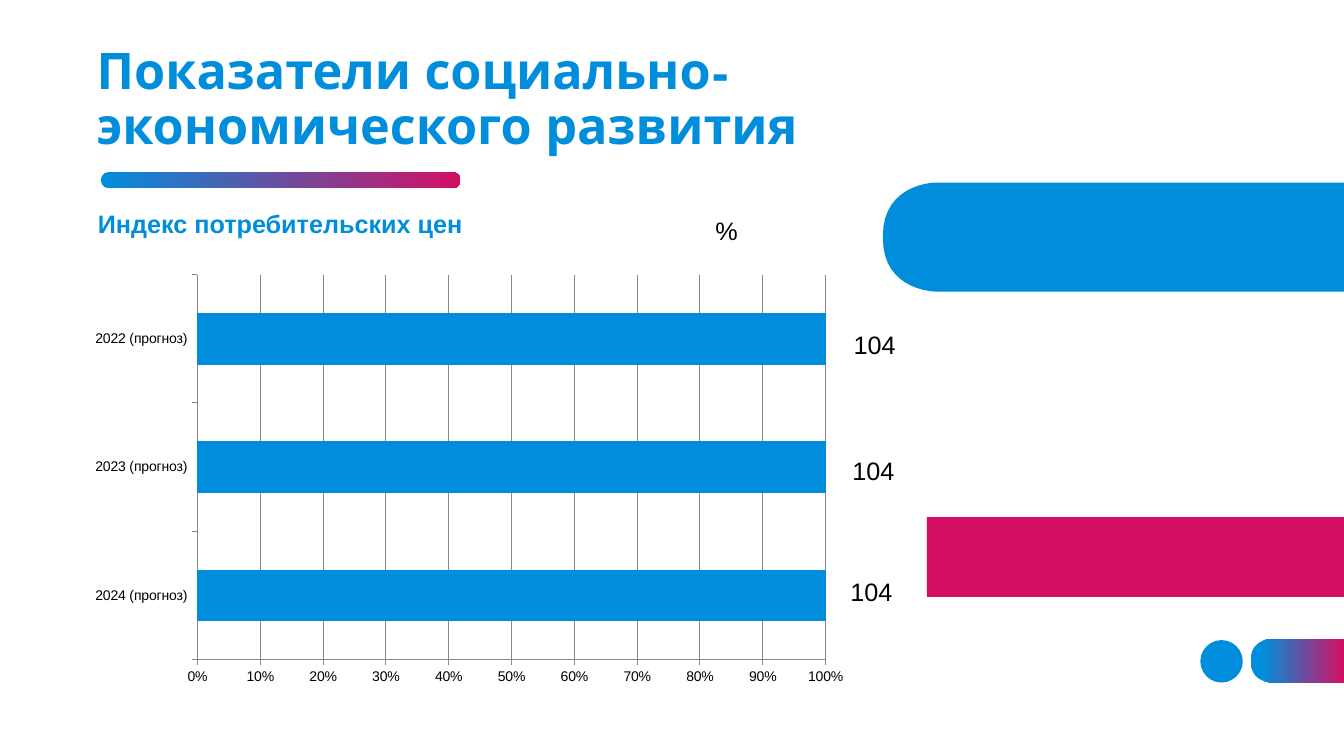
from pptx import Presentation
from pptx.chart.data import CategoryChartData
from pptx.dml.color import RGBColor
from pptx.enum.chart import XL_CHART_TYPE as ChartType, XL_TICK_MARK as TickMark
from pptx.enum.shapes import MSO_SHAPE as Preset
from pptx.enum.text import MSO_ANCHOR as Anchor, MSO_AUTO_SIZE as AutoSize, PP_ALIGN as Align
from pptx.util import Cm, Pt

BLUE = RGBColor(0x00, 0x8E, 0xDC)
PINK = RGBColor(0xD3, 0x0F, 0x64)
BLACK = RGBColor(0, 0, 0)
GRAY = RGBColor(0x87, 0x87, 0x87)

WIDTH, HEIGHT = 33.87, 19.05
TITLE = "Показатели социально-экономического развития"
SUBTITLE = "Индекс потребительских цен"
PRICE_INDEX = [("2024 (прогноз)", 100), ("2023 (прогноз)", 100), ("2022 (прогноз)", 100)]
LABELS = [("%", 17.78, 5.31), ("104", 21.26, 8.18), ("104", 21.23, 11.35), ("104", 21.18, 14.4)]
CURVE_STEPS = 16


def paint(shape, color=None, blend_start=0):
    """Fill a shape with one colour, or with the blue to pink blend."""
    shape.shadow.inherit = False
    shape.line.fill.background()
    if color is not None:
        shape.fill.solid()
        shape.fill.fore_color.rgb = color
        return
    shape.fill.gradient()
    shape.fill.gradient_angle = 0
    for stop, position, stop_color in zip(shape.fill.gradient_stops, (blend_start, 1), (BLUE, PINK)):
        stop.position = position
        stop.color.rgb = stop_color


def add_preset(slide, preset, left, top, width, height):
    """Add a preset shape measured in centimetres."""
    return slide.shapes.add_shape(preset, Cm(left), Cm(top), Cm(width), Cm(height))


def add_edge_tab(slide, left, top, bottom, radius):
    """Add a tab with a rounded left end that runs to the right slide edge."""
    steps = [step / CURVE_STEPS for step in range(CURVE_STEPS + 1)]
    curve = [(left + radius * (1 - t) ** 2 * (1 + 2 * t), radius * t ** 3) for t in steps]
    upper = [(x, top + drop) for x, drop in curve]
    lower = [(x, bottom - drop) for x, drop in reversed(curve)]
    outline = [(Cm(x), Cm(y)) for x, y in upper + lower + [(WIDTH, bottom)]]
    builder = slide.shapes.build_freeform(Cm(WIDTH), Cm(top), scale=1.0)
    builder.add_line_segments(outline, close=True)
    return builder.convert_to_shape()


def write(frame, text, size, font_name, color, bold=False):
    """Write one left-aligned run into a text frame."""
    paragraph = frame.paragraphs[0]
    paragraph.alignment = Align.LEFT
    run = paragraph.add_run()
    run.text = text
    run.font.size = Pt(size)
    run.font.name = font_name
    run.font.bold = bold
    run.font.color.rgb = color
    return paragraph


def place_heading(placeholder, box, anchor, text, size, font_name):
    """Move a placeholder and write a heading into it."""
    placeholder.left, placeholder.top, placeholder.width, placeholder.height = map(Cm, box)
    frame = placeholder.text_frame
    frame.word_wrap = True
    frame.auto_size = AutoSize.NONE
    frame.vertical_anchor = anchor
    paragraph = write(frame, text, size, font_name, BLUE, bold=True)
    paragraph.line_spacing = 0.9
    paragraph.space_before = Pt(0)


def add_price_chart(slide):
    """Add the stacked bar chart of the price index."""
    data = CategoryChartData()
    data.categories = [year for year, value in PRICE_INDEX]
    data.add_series("Индекс", [value for year, value in PRICE_INDEX])
    chart = slide.shapes.add_chart(
        ChartType.BAR_STACKED_100, Cm(2.01), Cm(6.71), Cm(19.63), Cm(10.77), data).chart
    chart.has_legend = False
    chart.has_title = False
    chart.font.size = Pt(10)
    chart.font.name = "Arial"
    chart.font.color.rgb = BLACK
    plot = chart.plots[0]
    plot.gap_width = 150
    plot.overlap = 100
    plot.vary_by_categories = False
    bars = plot.series[0].format.fill
    bars.solid()
    bars.fore_color.rgb = BLUE
    for axis in (chart.category_axis, chart.value_axis):
        axis.major_tick_mark = TickMark.OUTSIDE
        axis.minor_tick_mark = TickMark.NONE
        axis.format.line.color.rgb = GRAY
    values = chart.value_axis
    values.has_major_gridlines = True
    values.major_gridlines.format.line.color.rgb = GRAY
    values.tick_labels.number_format = "0%"
    values.tick_labels.number_format_is_linked = False


def main():
    """Build the price index slide and save it."""
    presentation = Presentation()
    presentation.slide_width, presentation.slide_height = Cm(WIDTH), Cm(HEIGHT)
    slide = presentation.slides.add_slide(presentation.slide_layouts[0])

    paint(add_preset(slide, Preset.OVAL, 30.25, 16.13, 1.07, 1.07), BLUE)
    paint(add_edge_tab(slide, 31.52, 16.1, 17.2, 0.53), blend_start=0.12)
    paint(add_edge_tab(slide, 22.25, 4.6, 7.35, 1.35), BLUE)
    paint(add_preset(slide, Preset.RECTANGLE, 23.36, 13.03, WIDTH - 23.36, 2.01), PINK)
    underline = add_preset(slide, Preset.ROUNDED_RECTANGLE, 2.54, 4.34, 9.06, 0.4)
    underline.adjustments[0] = 0.5
    paint(underline)

    title, subtitle = slide.placeholders
    place_heading(title, (2.18, 2.21, 25.4, 1.83), Anchor.BOTTOM, TITLE, 36, "League Spartan")
    place_heading(subtitle, (2.21, 5.21, 19, 1.37), Anchor.TOP, SUBTITLE, 18, "Arial")

    add_price_chart(slide)
    for text, left, top in LABELS:
        frame = slide.shapes.add_textbox(Cm(left), Cm(top), Cm(3.73), Cm(1.02)).text_frame
        frame.word_wrap = True
        write(frame, text, 18, "Arial", BLACK)

    presentation.save("out.pptx")


if __name__ == "__main__":
    main()
